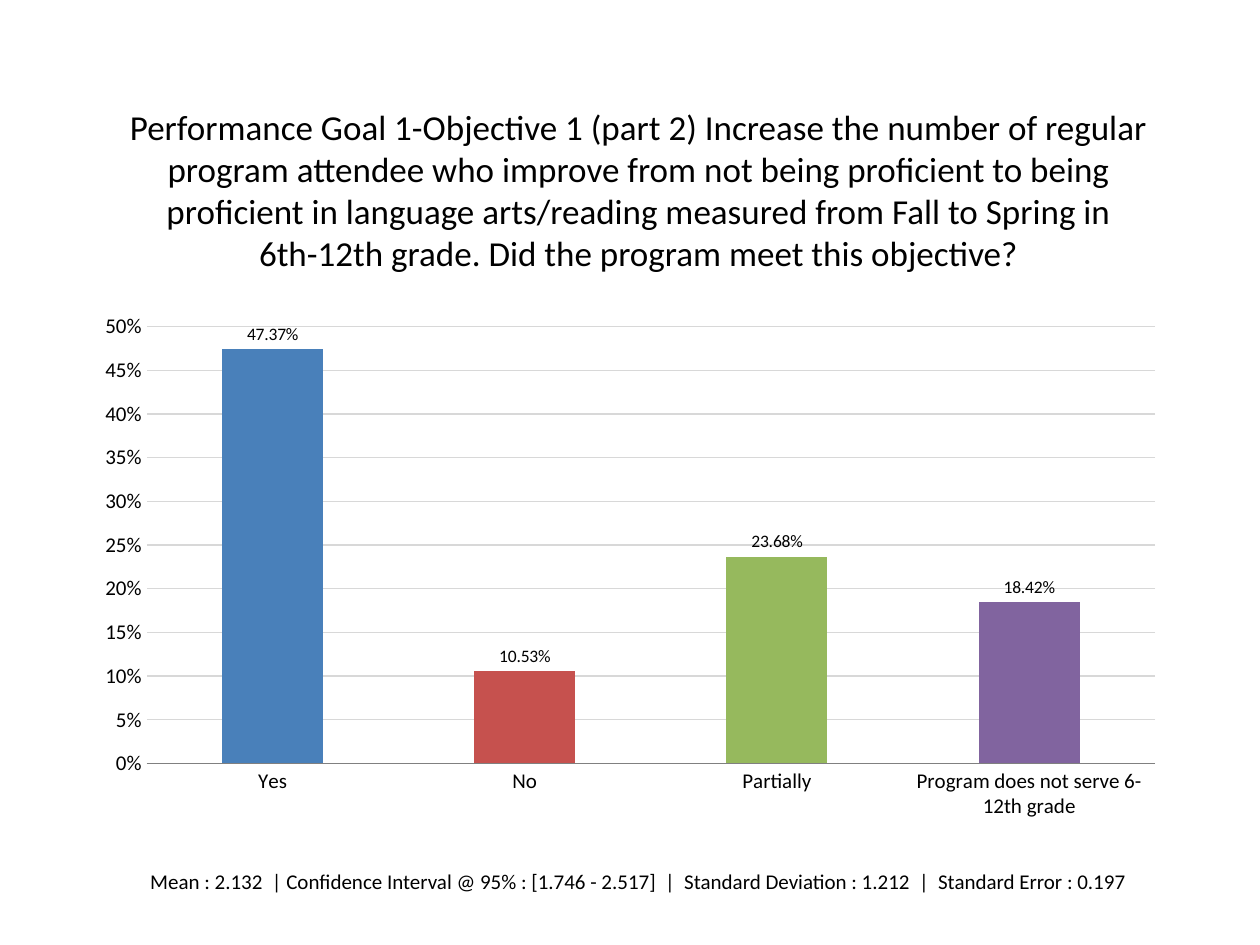
from pptx import Presentation
from pptx.chart.data import CategoryChartData
from pptx.dml.color import RGBColor
from pptx.enum.chart import XL_CHART_TYPE as ChartType
from pptx.enum.chart import XL_LABEL_POSITION as LabelPosition
from pptx.enum.chart import XL_TICK_MARK as TickMark
from pptx.enum.shapes import MSO_SHAPE as Shape
from pptx.enum.text import MSO_ANCHOR as Anchor
from pptx.enum.text import MSO_AUTO_SIZE as AutoSize
from pptx.enum.text import PP_ALIGN as Align
from pptx.util import Cm, Pt

BLACK = RGBColor(0x00, 0x00, 0x00)
AXIS_GRAY = RGBColor(0x80, 0x80, 0x80)
GRID_GRAY = RGBColor(0xD8, 0xD8, 0xD8)
BLUE = RGBColor(0x49, 0x80, 0xBA)
RED = RGBColor(0xC6, 0x51, 0x4E)
GREEN = RGBColor(0x96, 0xB9, 0x5D)
PURPLE = RGBColor(0x81, 0x64, 0x9F)
FONT = "Calibri"


def write_text(shape, text, size=12, color=BLACK, margin=Cm(0.25)):
    """Fill a shape with one centred paragraph."""
    frame = shape.text_frame
    frame.word_wrap = True
    frame.auto_size = AutoSize.NONE
    frame.vertical_anchor = Anchor.MIDDLE
    frame.margin_left = frame.margin_right = margin
    paragraph = frame.paragraphs[0]
    paragraph.alignment = Align.CENTER
    run = paragraph.add_run()
    run.text = text
    run.font.size = Pt(size)
    run.font.name = FONT
    run.font.color.rgb = color


presentation = Presentation()
presentation.slide_width = Cm(25.4)
presentation.slide_height = Cm(19.05)
slide = presentation.slides.add_slide(presentation.slide_layouts[5])

# Title
title = slide.shapes.title
title.left, title.top = Cm(1.85), Cm(2.06)
title.width, title.height = Cm(22.05), Cm(3.53)
write_text(
    title,
    "Performance Goal 1-Objective 1 (part 2) Increase the number of regular "
    "program attendee who improve from not being proficient to being "
    "proficient in language arts/reading measured from Fall to Spring in "
    "6th-12th grade. Did the program meet this objective?",
    size=20,
    margin=Cm(0.43),
)

# Chart of answers
answers = [
    ("Yes", 0.4737, BLUE),
    ("No", 0.1053, RED),
    ("Partially", 0.2368, GREEN),
    ("Program does not serve 6-12th grade", 0.1842, PURPLE),
]
chart_data = CategoryChartData()
chart_data.categories = [name for name, share, color in answers]
chart_data.add_series("Series 1", [share for name, share, color in answers])
chart = slide.shapes.add_chart(
    ChartType.COLUMN_CLUSTERED,
    Cm(1.68), Cm(6.12), Cm(22.05), Cm(10.59), chart_data,
).chart
chart.has_legend = False
chart.has_title = False
chart.font.name = FONT
chart.font.size = Pt(18)
chart.font.color.rgb = BLACK

# Bars and their labels
plot = chart.plots[0]
plot.gap_width = 150
plot.vary_by_categories = False
series = plot.series[0]
for index, (name, share, color) in enumerate(answers):
    fill = series.points[index].format.fill
    fill.solid()
    fill.fore_color.rgb = color
labels = series.data_labels
labels.show_value = True
labels.number_format = "0.00%"
labels.number_format_is_linked = False
labels.position = LabelPosition.OUTSIDE_END
labels.font.size = Pt(10)
labels.font.name = FONT
labels.font.color.rgb = BLACK

# Axes
for axis in (chart.category_axis, chart.value_axis):
    axis.major_tick_mark = axis.minor_tick_mark = TickMark.NONE
    axis.tick_labels.font.size = Pt(12)
    axis.tick_labels.font.name = FONT
    axis.tick_labels.font.color.rgb = BLACK
category_line = chart.category_axis.format.line
category_line.color.rgb = AXIS_GRAY
category_line.width = Pt(0.75)

value_axis = chart.value_axis
value_axis.minimum_scale, value_axis.maximum_scale = 0, 0.5
value_axis.major_unit = 0.05
value_axis.tick_labels.number_format = "0%"
value_axis.tick_labels.number_format_is_linked = False
value_axis.format.line.fill.background()
value_axis.has_major_gridlines = True
grid_line = value_axis.major_gridlines.format.line
grid_line.color.rgb = GRID_GRAY
grid_line.width = Pt(0.75)

# Statistics line
statistics = slide.shapes.add_shape(
    Shape.ROUNDED_RECTANGLE, Cm(1.85), Cm(16), Cm(22.05), Cm(3.53)
)
statistics.shadow.inherit = False
statistics.fill.background()
statistics.line.fill.background()
write_text(
    statistics,
    "Mean : 2.132  | Confidence Interval @ 95% : [1.746 - 2.517]  |  "
    "Standard Deviation : 1.212  |  Standard Error : 0.197",
)

presentation.save("out.pptx")
